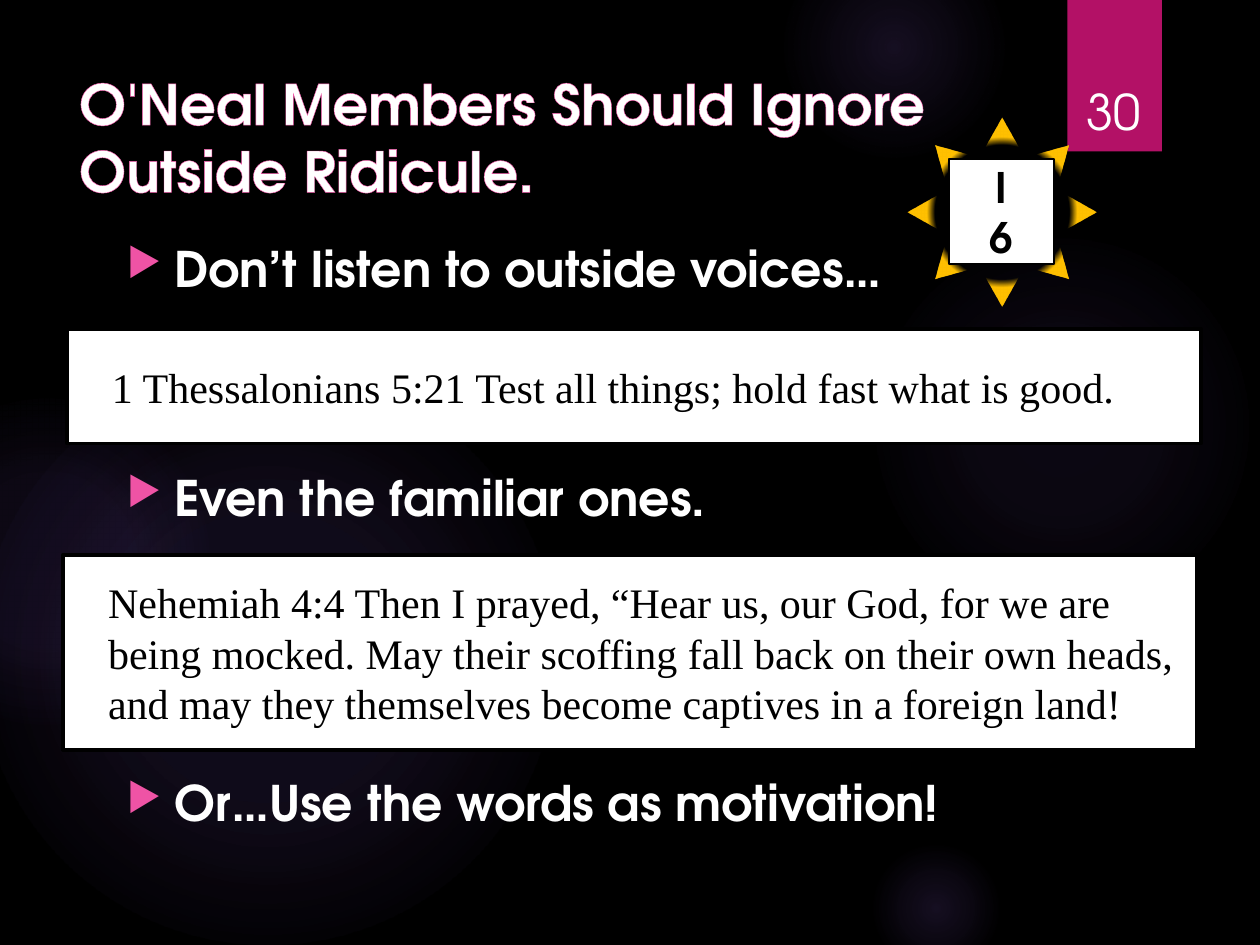
import pptx
import pptx.dml.color
import pptx.enum.shapes
import pptx.enum.text
import pptx.oxml.ns
import pptx.util
from lxml import etree

Pt = pptx.util.Pt
SHAPE = pptx.enum.shapes.MSO_SHAPE
ANCHOR = pptx.enum.text.MSO_ANCHOR
ALIGN = pptx.enum.text.PP_ALIGN

COLORS = {
    "black": "000000", "white": "FFFFFF", "glow": "9B6BF2", "ribbon": "B31166",
    "pink": "EF53A5", "yellow": "FFFF00", "gold": "FFC000",
}
HEAD_FONT = "TeX Gyre Adventor"
VERSE_FONT = "Times New Roman"


def rgb(name):
    return pptx.dml.color.RGBColor.from_string(COLORS[name])


def add_node(parent, tag, **attributes):
    values = {key: str(value) for key, value in attributes.items()}
    return etree.SubElement(parent, pptx.oxml.ns.qn(tag), values)


def add_color(parent, name, alpha=100):
    color = add_node(parent, "a:srgbClr", val=COLORS[name])
    if alpha < 100:
        add_node(color, "a:alpha", val=alpha * 1000)


def add_figure(page, kind, box, fill=None, line_width=0):
    shape = page.shapes.add_shape(kind, *[Pt(length) for length in box])
    shape.shadow.inherit = False
    if fill:
        shape.fill.solid()
        shape.fill.fore_color.rgb = rgb(fill)
    if line_width:
        shape.line.color.rgb = rgb("black")
        shape.line.width = Pt(line_width)
    else:
        shape.line.fill.background()
    return shape


def fill_radial(shape, stops):
    """Fill from the centre outwards; stops are (position, color, opacity)."""
    shape.fill.background()
    properties = shape._element.spPr
    gradient = etree.Element(pptx.oxml.ns.qn("a:gradFill"), rotWithShape="1")
    stop_list = add_node(gradient, "a:gsLst")
    for position, color, alpha in stops:
        add_color(add_node(stop_list, "a:gs", pos=position * 1000), color, alpha)
    circle = add_node(gradient, "a:path", **{"path": "circle"})
    add_node(circle, "a:fillToRect", l=50000, t=50000, r=50000, b=50000)
    properties.replace(properties.find(pptx.oxml.ns.qn("a:noFill")), gradient)


def add_text_box(page, box):
    return page.shapes.add_textbox(*[Pt(length) for length in box])


def set_text(shape, text, font, size, color, bold=False, anchor=ANCHOR.TOP, align=ALIGN.LEFT):
    frame = shape.text_frame
    frame.text = text
    frame.word_wrap = True
    frame.vertical_anchor = anchor
    for para in frame.paragraphs:
        para.alignment = align
        for span in para.runs:
            span.font.name = font
            span.font.size = Pt(size)
            span.font.bold = bold
            span.font.color.rgb = rgb(color)
    return frame


def add_glow(page, left, top, size, stops):
    orb = add_figure(page, SHAPE.OVAL, (left, top, size, size))
    fill_radial(orb, [(position, "glow", alpha) for position, alpha in stops])


def add_page_ribbon(page, box, number):
    left, top, width, height = box
    ribbon = add_figure(page, SHAPE.RECTANGLE, box, "ribbon")
    effects = ribbon._element.spPr.find(pptx.oxml.ns.qn("a:effectLst"))
    shadow = add_node(effects, "a:outerShdw", blurRad=Pt(3), dist=Pt(2),
                      dir=90 * 60000, rotWithShape=0)
    add_color(shadow, "black", 45)
    label = add_text_box(page, (left + 1.5, top + 23, width - 4, height - 26))
    set_text(label, number, HEAD_FONT, 28, "white", anchor=ANCHOR.BOTTOM, align=ALIGN.CENTER)


def add_title(page, box, text):
    frame = set_text(add_text_box(page, box), text, HEAD_FONT, 32, "white", bold=True)
    for span in frame.paragraphs[0].runs:
        outline = etree.Element(pptx.oxml.ns.qn("a:ln"), w=str(Pt(0.8)))
        add_color(add_node(outline, "a:solidFill"), "pink")
        span._r.get_or_add_rPr().insert(0, outline)


def add_points(page, box, points):
    """Bulleted points, given as (text, space before)."""
    text = "\n".join(point for point, gap in points)
    frame = set_text(add_text_box(page, box), text, HEAD_FONT, 28, "white", bold=True)
    for para, (point, gap) in zip(frame.paragraphs, points):
        para.space_before = Pt(gap)
        properties = para._p.get_or_add_pPr()
        properties.set("marL", str(Pt(27)))
        properties.set("indent", str(-Pt(27)))
        add_color(add_node(properties, "a:buClr"), "pink")
        add_node(properties, "a:buSzPct", val=80000)
        add_node(properties, "a:buChar", char="▶")


def add_verse(page, box, text):
    panel = add_figure(page, SHAPE.RECTANGLE, box, "white", line_width=2)
    frame = set_text(panel, text, VERSE_FONT, 24, "black", anchor=ANCHOR.MIDDLE)
    properties = frame.paragraphs[0]._p.get_or_add_pPr()
    properties.set("marL", str(Pt(18.72)))
    properties.set("indent", "0")


def add_sun_badge(page, box, text):
    left, top, width, height = box
    sun = add_figure(page, SHAPE.SUN, box)
    sun.adjustments[0] = 0.188
    fill_radial(sun, [(0, "yellow", 0), (50, "gold", 0), (56, "gold", 100)])
    side = 60
    card_box = (left + (width - side) / 2, top + (height - side) / 2, side, side)
    card = add_figure(page, SHAPE.RECTANGLE, card_box, "white", line_width=1)
    set_text(card, text, HEAD_FONT, 24, "black", bold=True,
             anchor=ANCHOR.MIDDLE, align=ALIGN.CENTER)


def build_page(page):
    page.background.fill.solid()
    page.background.fill.fore_color.rgb = rgb("black")

    # Faint glows behind everything
    glows = [
        (496, 132, 222, [(0, 7), (36, 6), (69, 0)]),
        (448, -36, 126, [(0, 14), (36, 7), (73, 0)]),
        (496, 480, 78, [(0, 14), (36, 7), (66, 0)]),
        (-12, 210, 330, [(0, 11), (36, 10), (75, 0)]),
        (-66, 228, 186, [(0, 8), (36, 8), (72, 0)]),
    ]
    for left, top, size, stops in glows:
        add_glow(page, left, top, size, stops)

    # Heading and points
    add_page_ribbon(page, (610, 0, 54, 86.5), "30")
    add_title(page, (38.2, 36, 579, 72.7), "O'Neal Members Should Ignore Outside Ridicule.")
    add_points(page, (65.5, 132.5, 579, 359), [
        ("Don’t listen to outside voices…", 10),
        ("Even the familiar ones.", 97.3),
        ("Or…Use the words as motivation!", 140.7),
    ])

    # Verses between the points
    add_verse(page, (38.2, 188, 648, 65.5),
              "1 Thessalonians 5:21 Test all things; hold fast what is good.")
    add_verse(page, (36, 317, 648, 111.5),
              "Nehemiah 4:4 Then I prayed, “Hear us, our God, for we are being mocked. "
              "May their scoffing fall back on their own heads, and may they themselves "
              "become captives in a foreign land!")

    # Section badge
    add_sun_badge(page, (518.4, 67, 108, 108), "I\n6")


def main():
    deck = pptx.Presentation()
    deck.slide_width, deck.slide_height = Pt(720), Pt(540)
    build_page(deck.slides.add_slide(deck.slide_layouts[6]))
    deck.save("out.pptx")


if __name__ == "__main__":
    main()
